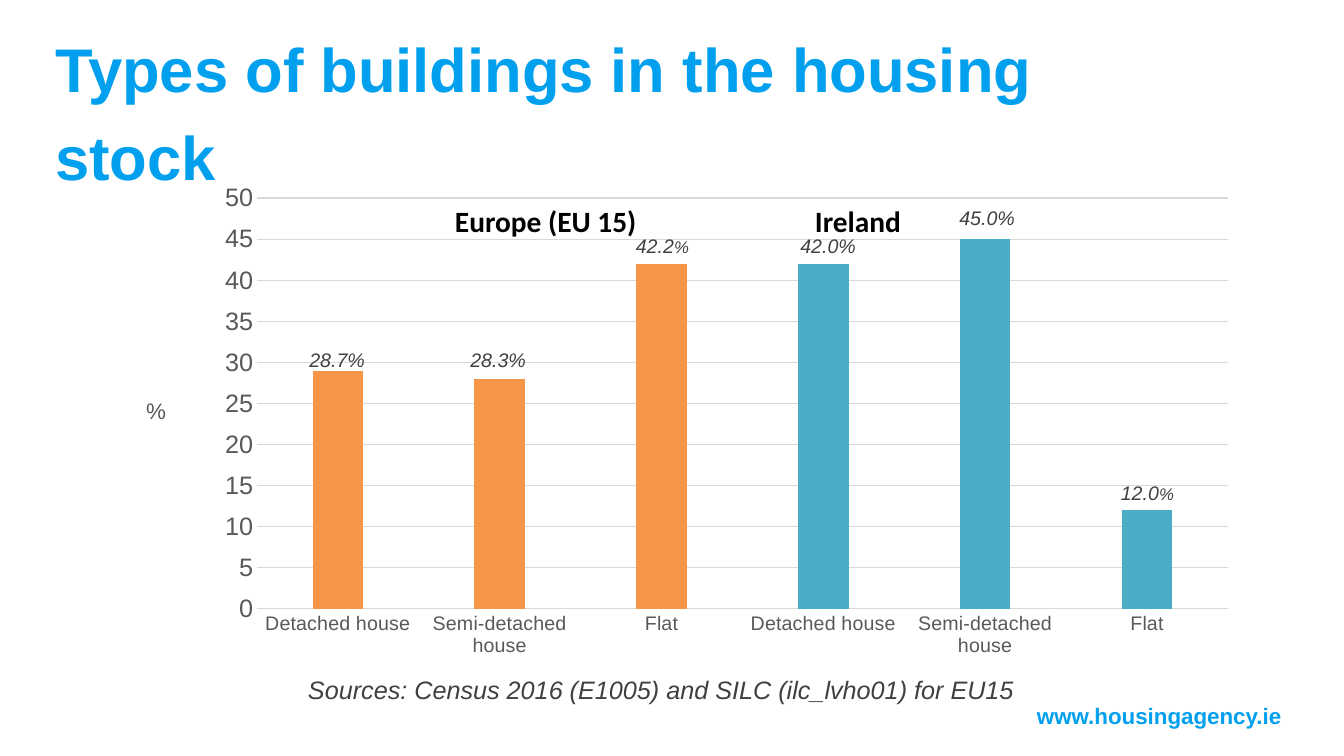
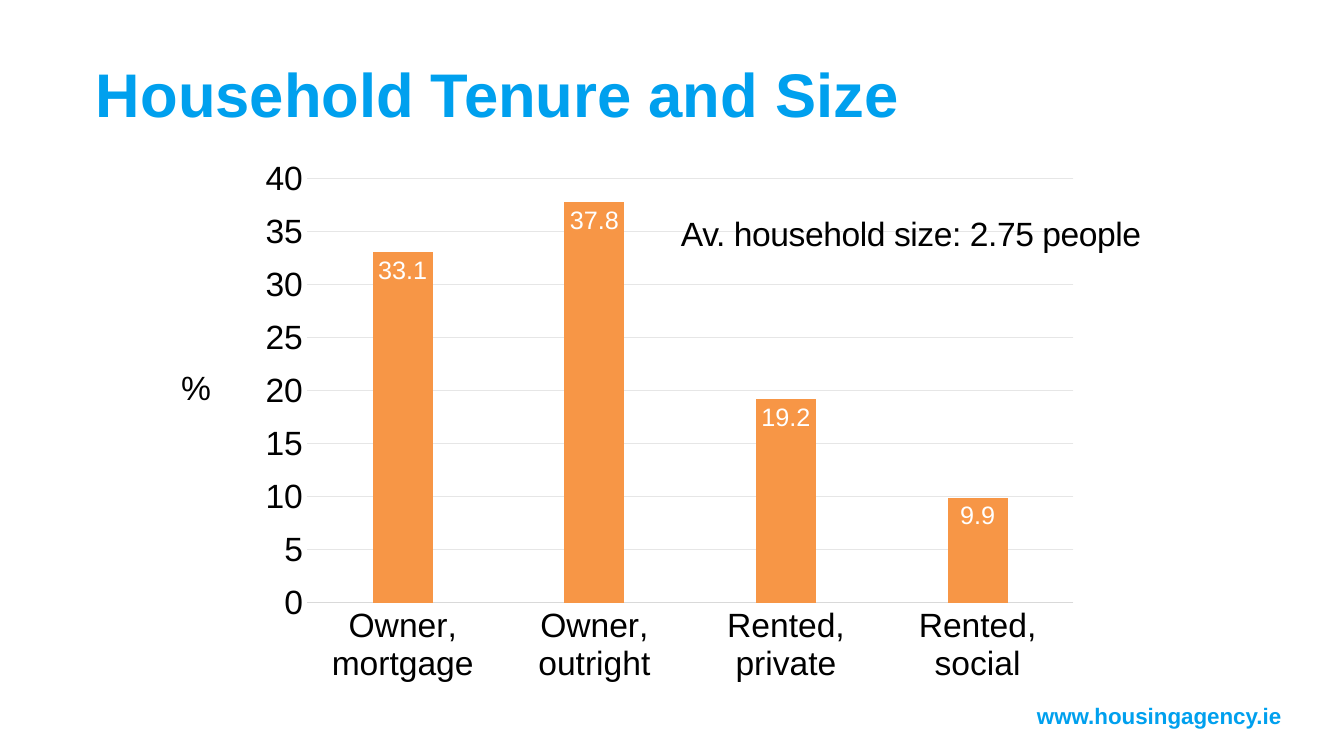
from dataclasses import dataclass

from lxml.etree import Element, SubElement
from pptx import Presentation
from pptx.chart.data import CategoryChartData
from pptx.dml.color import RGBColor
from pptx.enum.chart import XL_CHART_TYPE, XL_LABEL_POSITION, XL_TICK_MARK
from pptx.enum.text import MSO_ANCHOR, PP_ALIGN
from pptx.oxml.ns import qn
from pptx.util import Pt

SCALE = 914400 / 100.8  # EMU in one px


@dataclass(frozen=True)
class Theme:
    body: str = "Arial"
    heading: str = "Calibri"
    blue: str = "00A0EE"
    orange: str = "F79646"
    teal: str = "4BACC6"
    black: str = "000000"
    white: str = "FFFFFF"
    dark: str = "404040"
    gray: str = "595959"
    axis_line: str = "D9D9D9"
    pale_line: str = "E6E6E6"
    title: int = 44
    large: int = 24
    group: int = 21
    medium: int = 18
    small: int = 16
    label: int = 14
    tiny: int = 12
    chart: int = 10


THEME = Theme()
SLIDE_SIZE = (1344, 756)
FOOTER = "www.housingagency.ie"
FOOTER_AT = (1037, 702, 297, 27)
TITLE_SIZE = (1037, 95)

# plot and unit_at are measured from the chart's top left corner
BUILDINGS_TITLE = "Types of buildings in the housing stock"
BUILDING_TYPES = ["Detached house", "Semi-detached house", "Flat"]
BUILDINGS = dict(
    at=(140, 179, 1111, 500),
    categories=BUILDING_TYPES * 2,
    values=[29, 28, 42, 42, 45, 12], number_format="0",
    colors=[THEME.orange] * 3 + [THEME.teal] * 3,
    maximum=50, plot=(117, 19, 971, 411), unit_at=(2, 214),
    unit_size=THEME.small, category_size=THEME.label, value_size=THEME.medium,
    text_color=THEME.gray, grid=THEME.axis_line,
)
GROUPS = [("Europe (EU 15)", 455), ("Ireland", 815)]
# number, size of the percent sign, right edge and top, one for each bar
BAR_LABELS = [
    ("28.7", THEME.label, 365, 348), ("28.3", THEME.label, 526, 348),
    ("42.2", THEME.tiny, 689, 234), ("42.0", THEME.label, 856, 234),
    ("45.0", THEME.label, 1015, 206), ("12.0", THEME.tiny, 1174, 481),
]
BAR_LABEL_SIZE = (80, 30)
SOURCES = "Sources: Census 2016 (E1005) and SILC (ilc_lvho01) for EU15"

TENURE_TITLE = "Household Tenure and Size"
TENURE = dict(
    at=(156, 152, 918, 591),
    categories=["Owner, mortgage", "Owner, outright", "Rented, private", "Rented, social"],
    values=[33.1, 37.8, 19.2, 9.9], number_format="0.0",
    colors=[THEME.orange] * 4,
    maximum=40, plot=(151, 27, 767, 424), unit_at=(19, 208),
    unit_size=THEME.large, category_size=THEME.large, value_size=THEME.large,
    text_color=THEME.black, grid=THEME.pale_line,
)
HOUSEHOLD_SIZE = "Av. household size: 2.75 people"


def px(*lengths):
    return [round(length * SCALE) for length in lengths]


def style_font(font, size, color, name=THEME.body, bold=False, italic=False):
    font.name, font.size, font.bold, font.italic = name, Pt(size), bold, italic
    font.color.rgb = RGBColor.from_string(color)


def add_text(page, at, text, size, color, align=PP_ALIGN.LEFT, **style):
    """Add one paragraph in a box without insets and return the box."""
    box = page.shapes.add_textbox(*px(*at))
    frame = box.text_frame
    frame.word_wrap = True
    frame.margin_left = frame.margin_top = frame.margin_right = frame.margin_bottom = 0
    frame.text = text
    para = frame.paragraphs[0]
    para.alignment = align
    style_font(para.runs[0].font, size, color, **style)
    return box


def add_page(deck):
    page = deck.slides.add_slide(deck.slide_layouts[6])
    add_text(page, FOOTER_AT, FOOTER, THEME.small, THEME.blue, bold=True)
    return page


def add_title(page, left, top, text):
    box = add_text(page, (left, top, *TITLE_SIZE), text, THEME.title, THEME.blue, bold=True)
    box.text_frame.vertical_anchor = MSO_ANCHOR.MIDDLE
    para = box.text_frame.paragraphs[0]
    para.line_spacing = 1.2
    para.space_after = Pt(6)


def place_manually(element, place, chart_size, inner=False):
    """Give a plot area or axis title a fixed place inside the chart."""
    layout = element.find(qn("c:layout"))
    if layout is None:
        layout = Element(qn("c:layout"))
        element.insert(0, layout)
    manual = SubElement(layout, qn("c:manualLayout"))
    settings = [("layoutTarget", "inner")] if inner else []
    settings += [("xMode", "edge"), ("yMode", "edge")]
    fractions = [length / whole for length, whole in zip(place, chart_size * 2)]
    settings += zip("xywh", map(str, fractions))
    for tag, value in settings:
        SubElement(manual, qn(f"c:{tag}")).set("val", value)


def style_line(line, color):
    line.color.rgb = RGBColor.from_string(color)
    line.width = Pt(0.75)


def add_column_chart(page, at, categories, values, number_format, colors, maximum, plot,
                     unit_at, unit_size, category_size, value_size, text_color, grid):
    data = CategoryChartData(number_format=number_format)
    data.categories = categories
    data.add_series("Series 1", values)
    chart = page.shapes.add_chart(XL_CHART_TYPE.COLUMN_CLUSTERED, *px(*at), data).chart
    chart.has_title = chart.has_legend = False
    style_font(chart.font, THEME.chart, THEME.black)

    columns = chart.plots[0]
    columns.gap_width, columns.overlap = 219, -27
    columns.vary_by_categories = False
    series = columns.series[0]
    series.invert_if_negative = False
    for index, color in enumerate(colors):
        fill = series.points[index].format.fill
        fill.solid()
        fill.fore_color.rgb = RGBColor.from_string(color)

    for axis, size in ((chart.category_axis, category_size), (chart.value_axis, value_size)):
        axis.major_tick_mark = axis.minor_tick_mark = XL_TICK_MARK.NONE
        style_font(axis.tick_labels.font, size, text_color)
    style_line(chart.category_axis.format.line, THEME.axis_line)

    axis = chart.value_axis
    axis.minimum_scale, axis.maximum_scale, axis.major_unit = 0, maximum, 5
    axis.tick_labels.number_format = "0"
    axis.tick_labels.number_format_is_linked = False
    axis.format.line.fill.background()
    style_line(axis.major_gridlines.format.line, grid)

    frame = axis.axis_title.text_frame
    frame.text = "%"
    style_font(frame.paragraphs[0].runs[0].font, unit_size, text_color)
    body = next(axis.axis_title._element.iter(qn("a:bodyPr")))
    body.set("rot", "0")
    body.set("vert", "horz")
    chart_size = at[2:]
    place_manually(axis.axis_title._element, unit_at, chart_size)
    plot_area = next(chart._chartSpace.iter(qn("c:plotArea")))
    place_manually(plot_area, plot, chart_size, inner=True)
    return chart


def build_buildings(deck):
    page = add_page(deck)
    add_column_chart(page, **BUILDINGS)
    for name, left in GROUPS:
        add_text(page, (left, 203, 200, 36), name, THEME.group, THEME.black,
                 name=THEME.heading, bold=True)
    width, height = BAR_LABEL_SIZE
    for number, sign_size, right, top in BAR_LABELS:
        box = add_text(page, (right - width, top, width, height), number,
                       THEME.label, THEME.dark, PP_ALIGN.RIGHT, italic=True)
        span = box.text_frame.paragraphs[0].add_run()
        span.text = "%"
        style_font(span.font, sign_size, THEME.dark, italic=True)
    add_text(page, (308, 674, 740, 30), SOURCES, THEME.medium, THEME.dark, italic=True)
    add_title(page, 55, 57, BUILDINGS_TITLE)


def build_tenure(deck):
    page = add_page(deck)
    add_title(page, 96, 38, TENURE_TITLE)
    chart = add_column_chart(page, **TENURE)
    columns = chart.plots[0]
    columns.has_data_labels = True
    labels = columns.data_labels
    labels.show_value = True
    labels.position = XL_LABEL_POSITION.INSIDE_END
    labels.number_format = TENURE["number_format"]
    labels.number_format_is_linked = False
    style_font(labels.font, THEME.medium, THEME.white)
    box = add_text(page, (681, 213, 504, 42), HOUSEHOLD_SIZE, THEME.large, THEME.black)
    span = box.text_frame.paragraphs[0].runs[0]
    span.font._element.set("spc", "-30")


def main():
    deck = Presentation()
    deck.slide_width, deck.slide_height = px(*SLIDE_SIZE)
    build_buildings(deck)
    build_tenure(deck)
    deck.save("out.pptx")


if __name__ == "__main__":
    main()
